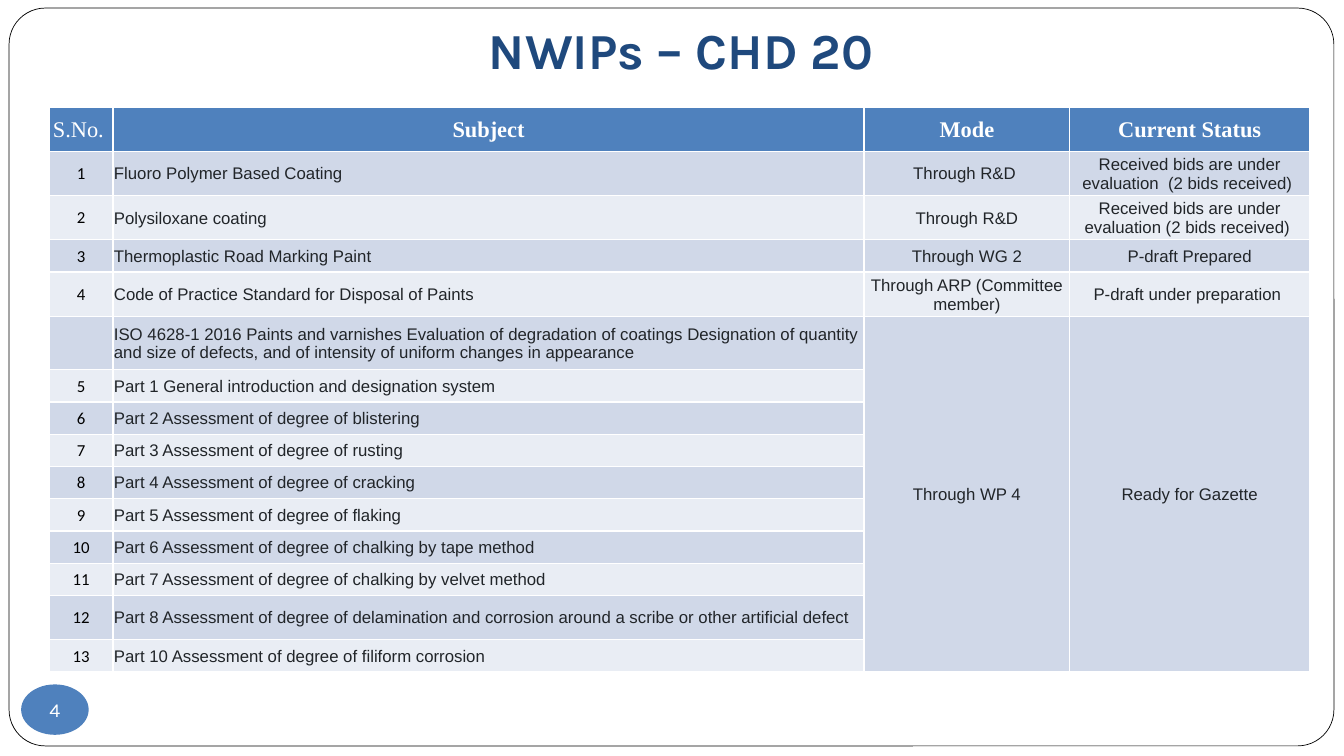
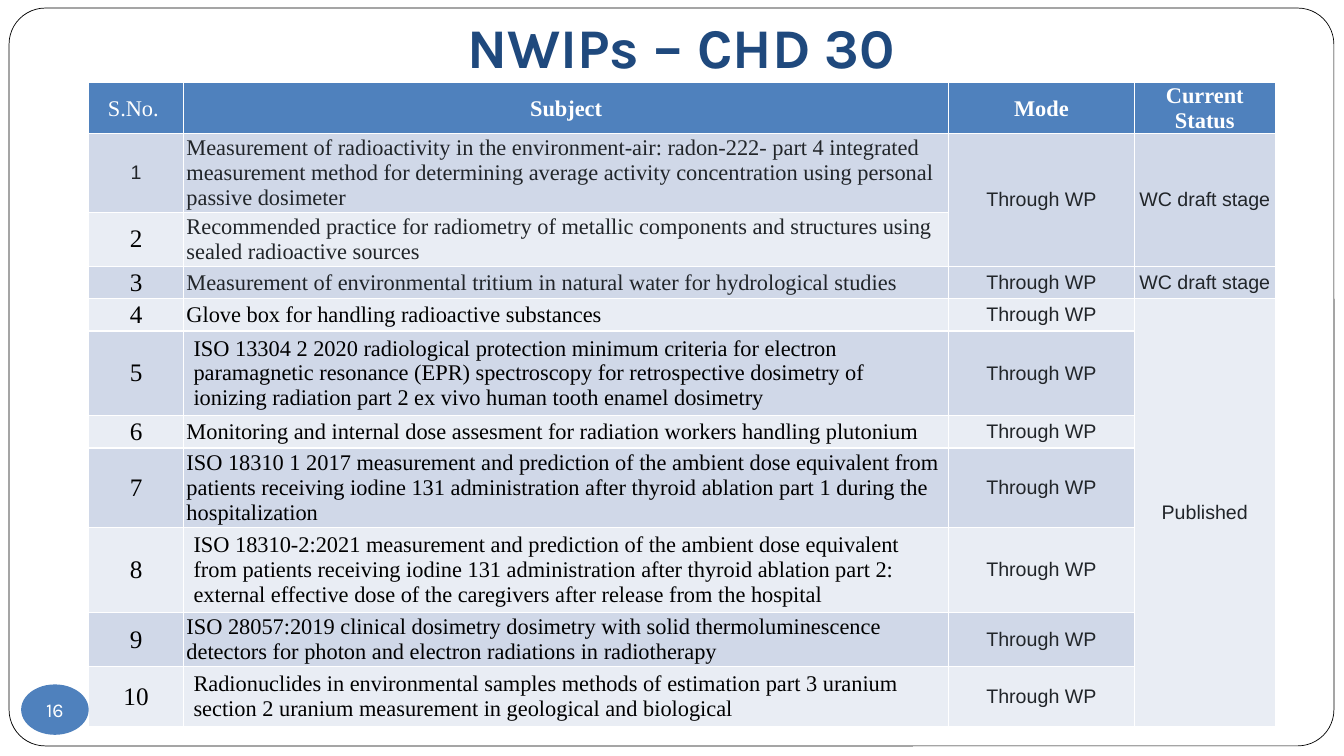
"""Build two status slides, each with a framed title, a table and a page badge."""
from pptx import Presentation
from pptx.dml.color import RGBColor
from pptx.enum.shapes import MSO_SHAPE
from pptx.enum.text import MSO_ANCHOR, MSO_AUTO_SIZE, PP_ALIGN
from pptx.util import Inches, Pt

ROUND, OVAL = MSO_SHAPE.ROUNDED_RECTANGLE, MSO_SHAPE.OVAL
TOP, MIDDLE, BOTTOM = MSO_ANCHOR.TOP, MSO_ANCHOR.MIDDLE, MSO_ANCHOR.BOTTOM
LEFT, CENTER = PP_ALIGN.LEFT, PP_ALIGN.CENTER
NO_FIT = MSO_AUTO_SIZE.NONE

WHITE = RGBColor(0xFF, 0xFF, 0xFF)
BLACK = RGBColor(0x00, 0x00, 0x00)
NAVY = RGBColor(0x1F, 0x49, 0x7D)
BLUE = RGBColor(0x4F, 0x81, 0xBD)
GREY = RGBColor(0x21, 0x25, 0x29)
DARK = RGBColor(0xD0, 0xD8, 0xE8)
PALE = RGBColor(0xE9, 0xED, 0xF4)

SERIF = "Times New Roman"
HEAD = ("S.No. ", "Subject", "Mode", "Current Status")
TIGHT = (0.01, 0.01, 0.01, 0)
SNUG = (0.03, 0.02, 0.03, 0.02)
LOOSE = (0.1, 0.05, 0.1, 0.05)
SMALL = ("Arial", 12, GREY)
PLAIN = ("Arial", 14, GREY)
WP = "Through WP"

PAINTS = [
    ("1", "Fluoro Polymer Based Coating", "Through R&D ",
     "Received bids are under evaluation  (2 bids received) "),
    ("2", "Polysiloxane coating", "Through R&D",
     "Received bids are under evaluation (2 bids received) "),
    ("3", "Thermoplastic Road Marking Paint", "Through WG 2", "P-draft Prepared"),
    ("4", "Code of Practice Standard for Disposal of Paints",
     "Through ARP (Committee member)", "P-draft under preparation "),
    ("", "ISO 4628-1 2016 Paints and varnishes Evaluation of degradation of coatings "
     "Designation of quantity and size of defects, and of intensity of uniform "
     "changes in appearance", "Through WP 4", "Ready for Gazette"),
    ("5", "Part 1 General introduction and designation system", "", ""),
    ("6", "Part 2 Assessment of degree of blistering", "", ""),
    ("7", "Part 3 Assessment of degree of rusting", "", ""),
    ("8", "Part 4 Assessment of degree of cracking", "", ""),
    ("9", "Part 5 Assessment of degree of flaking", "", ""),
    ("10", "Part 6 Assessment of degree of chalking by tape method", "", ""),
    ("11", "Part 7 Assessment of degree of chalking by velvet method", "", ""),
    ("12", "Part 8 Assessment of degree of delamination and corrosion around a "
     "scribe or other artificial defect", "", ""),
    ("13", "Part 10 Assessment of degree of filiform corrosion", "", ""),
]

DOSES = [
    ("1", "Measurement of radioactivity in the environment-air: radon-222- part 4 "
     "integrated measurement method for determining average activity concentration "
     "using personal passive dosimeter", WP, "WC draft stage"),
    ("2", "Recommended practice for radiometry of metallic components and structures "
     "using sealed radioactive sources", "", ""),
    ("3", "Measurement of environmental tritium in natural water for hydrological "
     "studies", WP, "WC draft stage"),
    ("4", "Glove box for handling radioactive substances", WP, "Published"),
    ("5", "ISO 13304 2 2020 radiological protection minimum criteria for electron "
     "paramagnetic resonance (EPR) spectroscopy for retrospective dosimetry of "
     "ionizing radiation part 2 ex vivo human tooth enamel dosimetry", WP, ""),
    ("6", "Monitoring and internal dose assesment for radiation workers handling "
     "plutonium", WP, ""),
    ("7", "ISO 18310 1 2017 measurement and prediction of the ambient dose equivalent "
     "from patients receiving iodine 131 administration after thyroid ablation "
     "part 1 during the hospitalization", WP, ""),
    ("8", "ISO 18310-2:2021 measurement and prediction of the ambient dose equivalent "
     "from patients receiving iodine 131 administration after thyroid ablation "
     "part 2: external effective dose of the caregivers after release from the "
     "hospital", WP, ""),
    ("9", "ISO 28057:2019 clinical dosimetry dosimetry with solid thermoluminescence "
     "detectors for photon and electron radiations in radiotherapy", WP, ""),
    ("10", "Radionuclides in environmental samples methods of estimation part 3 "
     "uranium section 2 uranium measurement in geological and biological", WP, ""),
]

SLIDES = [
    dict(title="NWIPs – CHD 20", size=36, top=0.33, page="4", rows=PAINTS,
         at=(0.49, 1.07), cols=(0.63, 7.45, 2.04, 2.38), pad=TIGHT,
         tall=(0.43, 0.44, 0.44, 0.32, 0.44, 0.53) + (0.32,) * 7 + (0.44, 0.32),
         fonts=(("Calibri", 12, BLACK), SMALL, SMALL, SMALL),
         odd={}, loose=(), spans=((5, 14, 2), (5, 14, 3))),
    dict(title="NWIPs – CHD 30", size=40, top=0, page="16", rows=DOSES,
         at=(0.88, 0.82), cols=(0.94, 7.59, 1.84, 1.4), pad=SNUG,
         tall=(0.5, 0.77, 0.54, 0.32, 0.32, 0.84, 0.32, 0.79, 0.84, 0.54, 0.58),
         fonts=((SERIF, 18, BLACK), (SERIF, 16, BLACK), PLAIN, PLAIN),
         odd={(1, 0): PLAIN, **{(row, 1): (SERIF, 16, GREY) for row in (1, 2, 3)}},
         loose=((5, 1), (8, 1), (10, 1)),
         spans=((1, 2, 2), (1, 2, 3), (4, 10, 3))),
]


def write(frame, text, font, align=CENTER, bold=False):
    """Put one styled run into the first paragraph."""
    para = frame.paragraphs[0]
    para.alignment = align
    run = para.add_run()
    run.text = text
    run.font.name, run.font.size, run.font.color.rgb = font[0], Pt(font[1]), font[2]
    run.font.bold = bold


def inset(box, pad):
    """Set the four text margins of a frame or cell."""
    (box.margin_left, box.margin_top,
     box.margin_right, box.margin_bottom) = map(Inches, pad)


deck = Presentation()
deck.slide_width, deck.slide_height = Inches(13.33), Inches(7.5)
layout = deck.slide_layouts[5]

for num, page in enumerate(SLIDES):
    slide = deck.slides.add_slide(layout)
    shapes = slide.shapes

    if num == 0:
        border = shapes.add_shape(ROUND, Inches(0.09), Inches(0.08),
                                  Inches(13.14), Inches(7.32))
        border.adjustments[0] = 0.049
        border.shadow.inherit = False
        border.fill.solid()
        border.fill.fore_color.rgb = WHITE
        border.line.color.rgb = BLACK
        border.line.width = Pt(0.5)
        layout.shapes.element.insert(2, border.element)

    title = shapes.title
    title.left, title.top = Inches(1.09), Inches(page["top"])
    title.width, title.height = Inches(11.33), Inches(0.89 - page["top"])
    frame = title.text_frame
    frame.auto_size = NO_FIT
    frame.word_wrap = True
    frame.vertical_anchor = BOTTOM
    inset(frame, (0.1, 0.05, 0.1, 0.1))
    write(frame, page["title"], ("Karla", page["size"], NAVY), bold=True)

    lines = [HEAD] + page["rows"]
    left, top = page["at"]
    table = shapes.add_table(len(lines), len(HEAD), Inches(left), Inches(top),
                             Inches(sum(page["cols"])), Inches(sum(page["tall"]))).table
    for col, width in zip(table.columns, page["cols"]):
        col.width = Inches(width)
    for row, height in zip(table.rows, page["tall"]):
        row.height = Inches(height)

    for r, line in enumerate(lines):
        for c, text in enumerate(line):
            cell = table.cell(r, c)
            cell.fill.solid()
            cell.fill.fore_color.rgb = BLUE if r == 0 else DARK if r % 2 else PALE
            loose = (r, c) in page["loose"]
            cell.vertical_anchor = TOP if loose else MIDDLE
            inset(cell, LOOSE if loose else page["pad"] if r else TIGHT)
            if not text:
                continue
            font = page["odd"].get((r, c), page["fonts"][c]) if r else (SERIF, 16, WHITE)
            align = LEFT if r and c == 1 else CENTER
            write(cell.text_frame, text, font, align, bold=r == 0 and c > 0)

    for first, last, c in page["spans"]:
        table.cell(first, c).merge(table.cell(last, c))

    badge = shapes.add_shape(OVAL, Inches(0.21), Inches(6.79), Inches(0.67), Inches(0.5))
    badge.shadow.inherit = False
    badge.fill.solid()
    badge.fill.fore_color.rgb = BLUE
    badge.line.fill.background()
    frame = badge.text_frame
    frame.word_wrap = False
    frame.vertical_anchor = MIDDLE
    inset(frame, (0, 0, 0, 0))
    write(frame, page["page"], ("Karla", 14, WHITE))

deck.save("out.pptx")
